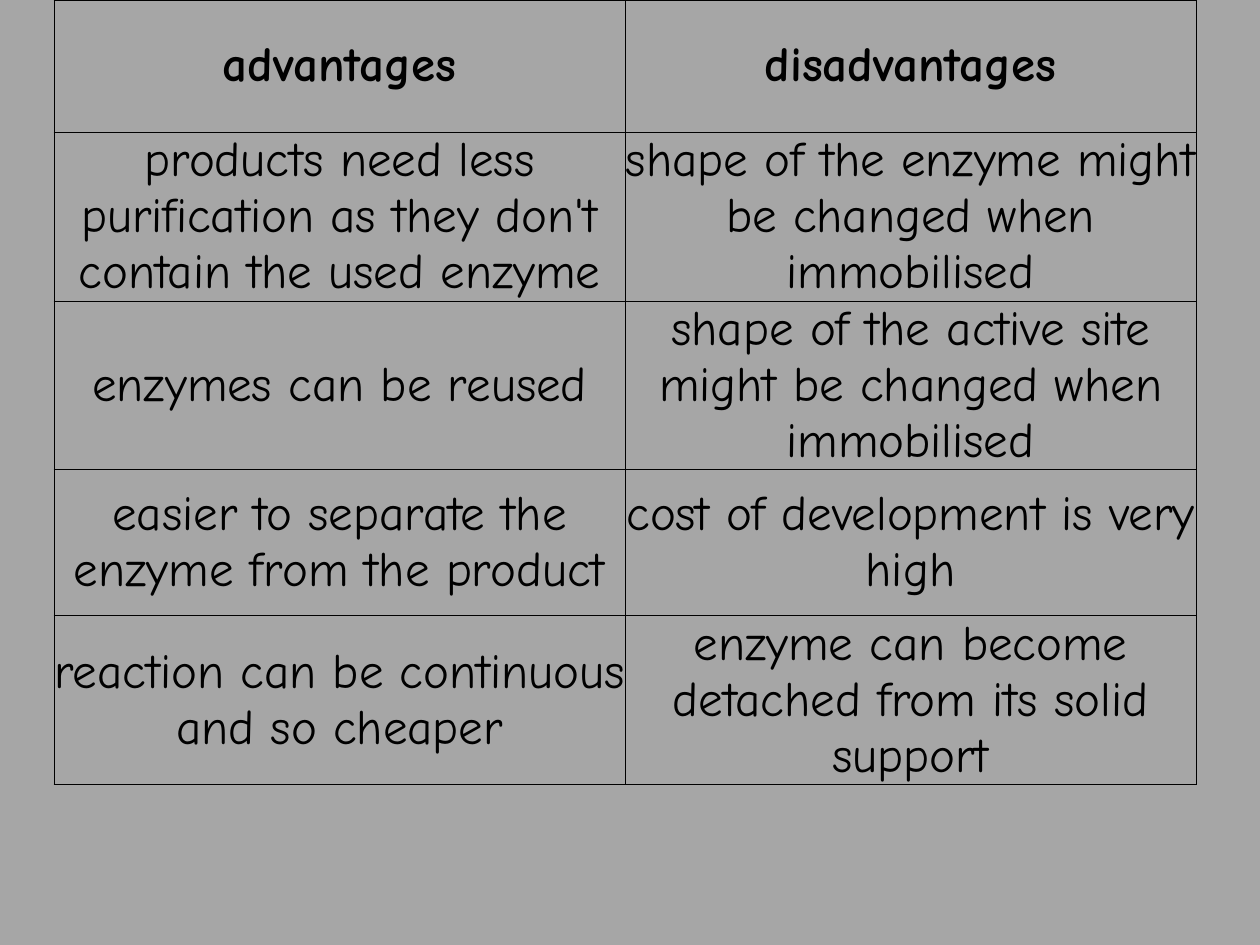
from lxml.etree import SubElement
from pptx import Presentation
from pptx.dml.color import RGBColor
from pptx.enum.text import MSO_ANCHOR, PP_ALIGN
from pptx.oxml.ns import qn
from pptx.util import Emu, Pt

PX = 914400 // 126
BLACK = RGBColor(0x00, 0x00, 0x00)
GRAY = RGBColor(0xA6, 0xA6, 0xA6)
ROWS = [
    ("advantages", "disadvantages"),
    ("products need less purification as they don't contain the used enzyme",
     "shape of the enzyme might be changed when immobilised"),
    ("enzymes can be reused",
     "shape of the active site might be changed when immobilised"),
    ("easier to separate the enzyme from the product",
     "cost of development is very high"),
    ("reaction can be continuous and so cheaper",
     "enzyme can become detached from its solid support"),
]
HEADER_HEIGHT, ROW_HEIGHT, COL_WIDTH = 132, 146, 571


def add_borders(cell):
    tcPr = cell._tc.get_or_add_tcPr()
    for side in ("lnL", "lnR", "lnT", "lnB"):
        ln = SubElement(tcPr, qn(f"a:{side}"), w=str(Pt(0.5)))
        fill = SubElement(ln, qn("a:solidFill"))
        SubElement(fill, qn("a:srgbClr"), val=str(BLACK))


prs = Presentation()
prs.slide_width = Emu(1260 * PX)
prs.slide_height = Emu(945 * PX)
s = prs.slides.add_slide(prs.slide_layouts[6])
s.background.fill.solid()
s.background.fill.fore_color.rgb = GRAY

frame = s.shapes.add_table(len(ROWS), 2, Emu(54 * PX), Emu(0),
                           Emu(2 * COL_WIDTH * PX), Emu(900 * PX))
table = frame.table
table.horz_banding = False
for col in table.columns:
    col.width = Emu(COL_WIDTH * PX)

for i, texts in enumerate(ROWS):
    table.rows[i].height = Emu((ROW_HEIGHT if i else HEADER_HEIGHT) * PX)
    for j, text in enumerate(texts):
        cell = table.cell(i, j)
        add_borders(cell)
        cell.fill.background()
        cell.vertical_anchor = MSO_ANCHOR.MIDDLE
        cell.margin_left = cell.margin_right = 0
        cell.margin_top = cell.margin_bottom = 0
        cell.text_frame.text = text
        p = cell.text_frame.paragraphs[0]
        p.alignment = PP_ALIGN.CENTER
        r = p.runs[0]
        r.font.name = "Comic Neue"
        r.font.size = Pt(28)
        r.font.bold = i == 0
        r.font.color.rgb = BLACK

frame.height = Emu(900 * PX)
prs.save("out.pptx")
